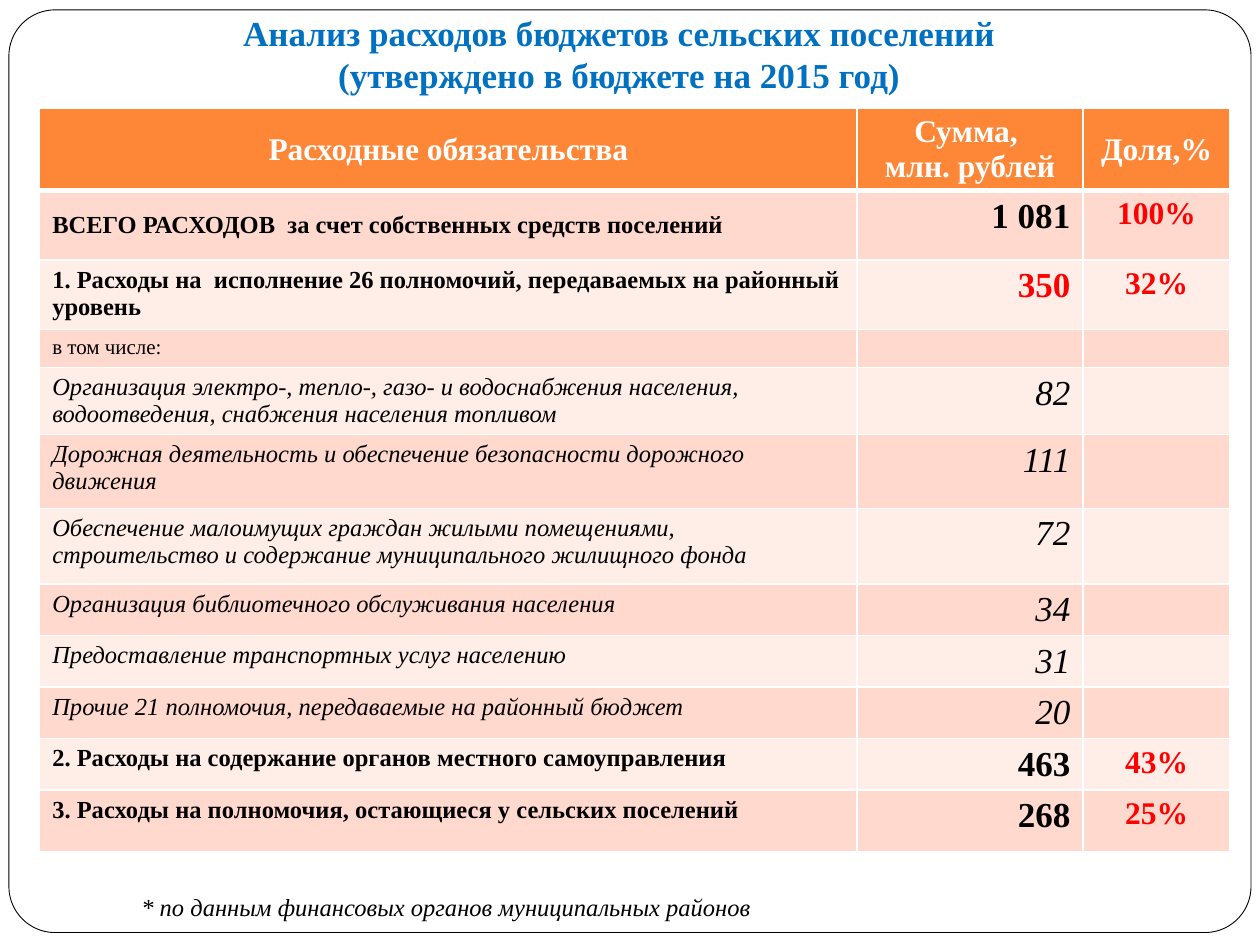
from lxml import etree
from pptx import Presentation
from pptx.dml.color import RGBColor
from pptx.enum.shapes import MSO_SHAPE
from pptx.enum.text import MSO_ANCHOR, MSO_AUTO_SIZE, PP_ALIGN
from pptx.oxml.ns import qn
from pptx.util import Cm, Pt

COLORS = {
    "white": "FFFFFF", "black": "000000", "red": "FF0000", "title": "0070C0",
    "header": "FE8637", "band_dark": "FFD9CE", "band_light": "FFEDE8",
}


def write(frame, text, align, color="black", **formats):
    """Fill a text frame, one paragraph per line of text."""
    frame.text = text
    for paragraph in frame.paragraphs:
        paragraph.alignment = align
        for run in paragraph.runs:
            run.font.color.rgb = RGBColor.from_string(COLORS[color])
            for name, value in {"name": "Times New Roman", **formats}.items():
                setattr(run.font, name, value)


def set_borders(cell, widths):
    """Draw white cell borders; widths are points for L, R, T and B."""
    properties = cell._tc.get_or_add_tcPr()
    for position, (side, width) in enumerate(zip("LRTB", widths)):
        line = etree.Element(qn(f"a:ln{side}"), w=str(Pt(width)))
        fill = etree.SubElement(line, qn("a:solidFill"))
        etree.SubElement(fill, qn("a:srgbClr"), val=COLORS["white"])
        properties.insert(position, line)


prs = Presentation()
prs.slide_width, prs.slide_height = Cm(25.4), Cm(19.05)
slide = prs.slides.add_slide(prs.slide_layouts[5])

# Rounded page frame, behind everything else
page_frame = slide.shapes.add_shape(
    MSO_SHAPE.ROUNDED_RECTANGLE, Cm(0.18), Cm(0.2), Cm(25.04), Cm(18.6))
page_frame.adjustments[0] = 0.05
page_frame.shadow.inherit = False
page_frame.fill.solid()
page_frame.fill.fore_color.rgb = RGBColor.from_string(COLORS["white"])
page_frame.line.color.rgb = RGBColor.from_string(COLORS["black"])
page_frame.line.width = Pt(0.5)
slide.shapes._spTree.insert(2, page_frame._element)

# Title
title = slide.shapes.title
title.left, title.top, title.width, title.height = Cm(1), Cm(0), Cm(23.14), Cm(2.18)
write(title.text_frame,
      "Анализ расходов бюджетов сельских поселений \v"
      "(утверждено в бюджете на 2015 год) ",
      PP_ALIGN.CENTER, "title", size=Pt(20), bold=True)
title_format = {
    "vertical_anchor": MSO_ANCHOR.BOTTOM, "auto_size": MSO_AUTO_SIZE.NONE,
    "word_wrap": True, "margin_bottom": Cm(0.25),
}
for name, value in title_format.items():
    setattr(title.text_frame, name, value)

# Expenses: kind, height in cm, obligation, sum, share
EXPENSES = [
    ("header", 1.6, "Расходные обязательства", "Сумма, \nмлн. рублей", "Доля,%"),
    ("total", 1.4, "ВСЕГО РАСХОДОВ  за счет собственных средств поселений",
     "1 081", "100%"),
    ("group", 1.4, "1. Расходы на  исполнение 26 полномочий, "
     "передаваемых на районный уровень", "350", "32%"),
    ("note", 0.73, "в том числе:", "", ""),
    ("item", 1.2, "Организация электро-, тепло-, газо- и водоснабжения населения, "
     "водоотведения, снабжения населения топливом", "82", ""),
    ("item", 1.49, "Дорожная деятельность и обеспечение безопасности "
     "дорожного движения", "111", ""),
    ("item", 1.53, "Обеспечение малоимущих граждан жилыми помещениями, "
     "строительство и содержание муниципального жилищного фонда", "72", ""),
    ("item", 1, "Организация библиотечного обслуживания населения", "34", ""),
    ("item", 1, "Предоставление транспортных услуг населению", "31", ""),
    ("item", 0.95, "Прочие 21 полномочия, передаваемые на районный бюджет", "20", ""),
    ("group", 1, "2. Расходы на содержание органов местного самоуправления",
     "463", "43%"),
    ("group", 1.24, "3. Расходы на полномочия, остающиеся у сельских поселений",
     "268", "25%"),
]
COLUMN_WIDTHS = [16.48, 4.55, 2.97]
COLUMN_ALIGNS = [PP_ALIGN.LEFT, PP_ALIGN.RIGHT, PP_ALIGN.CENTER]
COLUMN_SIZES = [14, 20, 18]

expenses = slide.shapes.add_table(
    len(EXPENSES), len(COLUMN_WIDTHS), Cm(0.8), Cm(2.18),
    Cm(sum(COLUMN_WIDTHS)), Cm(sum(row[1] for row in EXPENSES))).table
for column, width in zip(expenses.columns, COLUMN_WIDTHS):
    column.width = Cm(width)

for r, (kind, height, *texts) in enumerate(EXPENSES):
    expenses.rows[r].height = Cm(height)
    is_header = kind == "header"
    band = "header" if is_header else ("band_light", "band_dark")[r % 2]
    for c, text in enumerate(texts):
        cell = expenses.cell(r, c)
        cell.fill.solid()
        cell.fill.fore_color.rgb = RGBColor.from_string(COLORS[band])
        set_borders(cell, (1, 1, 3 if r == 1 else 1, 3 if is_header else 1))
        if is_header or (kind == "total" and c == 0):
            cell.vertical_anchor = MSO_ANCHOR.MIDDLE
        if not text:
            # An empty cell keeps a small font so that its row stays low
            cell.text_frame.paragraphs[0]._p.get_or_add_endParaRPr().set("sz", "1200")
            continue
        if is_header:
            align, size, color = PP_ALIGN.CENTER, 18, "white"
        else:
            align = COLUMN_ALIGNS[c]
            size = 12 if kind == "note" else COLUMN_SIZES[c]
            color = "red" if c == 2 or text == "350" else "black"
        write(cell.text_frame, text, align, color, size=Pt(size),
              bold=kind in ("header", "total", "group"), italic=kind == "item")

# Footnote
footnote = slide.shapes.add_textbox(Cm(2.6), Cm(17.85), Cm(17.27), Cm(0.86)).text_frame
footnote.word_wrap = True
write(footnote, "* по данным финансовых органов муниципальных районов",
      PP_ALIGN.LEFT, size=Pt(14), italic=True)

prs.save("out.pptx")
